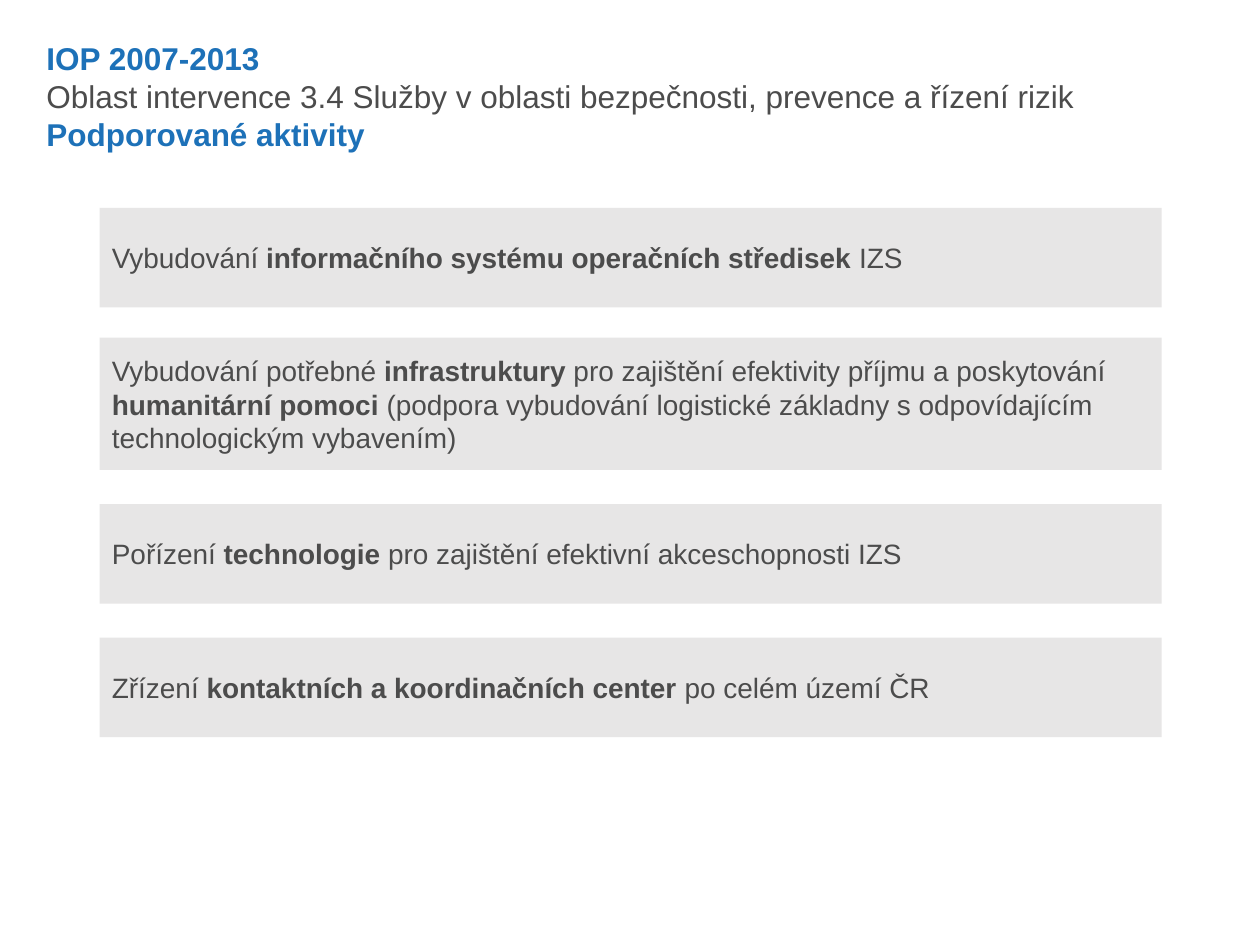
from dataclasses import dataclass

from pptx import Presentation
from pptx.dml.color import RGBColor
from pptx.enum.shapes import MSO_SHAPE as Shape
from pptx.enum.text import MSO_ANCHOR as Anchor, PP_ALIGN as Align
from pptx.util import Inches, Pt


@dataclass(frozen=True)
class Theme:
    """Colours, font and type sizes of the slide."""
    blue: RGBColor = RGBColor(0x1D, 0x71, 0xB8)
    grey: RGBColor = RGBColor(0x4C, 0x4C, 0x4C)
    panel: RGBColor = RGBColor(0xE7, 0xE6, 0xE6)
    font: str = "Arial"
    heading_size: int = 18
    body_size: int = 16


THEME = Theme()

HEADING = [
    ("IOP 2007-2013", True),
    ("Oblast intervence 3.4 Služby v oblasti bezpečnosti, prevence a řízení rizik", False),
    ("Podporované aktivity", True),
]

ACTIVITIES = [
    (1.65, 0.79, [("Vybudování ", False),
                  ("informačního systému operačních středisek ", True),
                  ("IZS", False)]),
    (2.68, 1.05, [("Vybudování potřebné ", False),
                  ("infrastruktury", True),
                  (" pro zajištění efektivity příjmu a poskytování ", False),
                  ("humanitární pomoci ", True),
                  ("(podpora vybudování logistické základny s odpovídajícím "
                   "technologickým vybavením)", False)]),
    (4, 0.79, [("Pořízení ", False),
               ("technologie", True),
               (" pro zajištění efektivní akceschopnosti IZS", False)]),
    (5.06, 0.79, [("Zřízení ", False),
                  ("kontaktních a koordinačních center ", True),
                  ("po celém území ČR", False)]),
]


def add_text(paragraph, text, *, size, color, bold=False):
    """Append a formatted run to a left-aligned paragraph."""
    paragraph.alignment = Align.LEFT
    run = paragraph.add_run()
    run.text = text
    run.font.name = THEME.font
    run.font.size = Pt(size)
    run.font.bold = bold
    run.font.color.rgb = color


def add_heading(slide, left, top, width, height):
    """Place the three-line heading in the given box."""
    heading = slide.shapes.add_textbox(left, top, width, height)
    frame = heading.text_frame
    frame.word_wrap = True
    for index, (line, strong) in enumerate(HEADING):
        paragraph = frame.add_paragraph() if index else frame.paragraphs[0]
        add_text(paragraph, line, size=THEME.heading_size, bold=strong,
                 color=THEME.blue if strong else THEME.grey)


def add_activity(slide, left, top, width, height, phrases):
    """Place one activity panel with its emphasised phrases."""
    panel = slide.shapes.add_shape(Shape.RECTANGLE, left, top, width, height)
    panel.shadow.inherit = False
    panel.fill.solid()
    panel.fill.fore_color.rgb = THEME.panel
    panel.line.fill.background()
    frame = panel.text_frame
    frame.word_wrap = True
    frame.vertical_anchor = Anchor.MIDDLE
    for phrase, strong in phrases:
        add_text(frame.paragraphs[0], phrase, size=THEME.body_size,
                 color=THEME.grey, bold=strong)


def main():
    """Build and save the slide."""
    deck = Presentation()
    deck.slide_width, deck.slide_height = Inches(10), Inches(7.5)
    slide = deck.slides.add_slide(deck.slide_layouts[6])
    add_heading(slide, Inches(0.27), Inches(0.26), Inches(9.62), Inches(1.01))
    for top, height, phrases in ACTIVITIES:
        add_activity(slide, Inches(0.79), Inches(top), Inches(8.43), Inches(height), phrases)
    deck.save("out.pptx")


if __name__ == "__main__":
    main()
